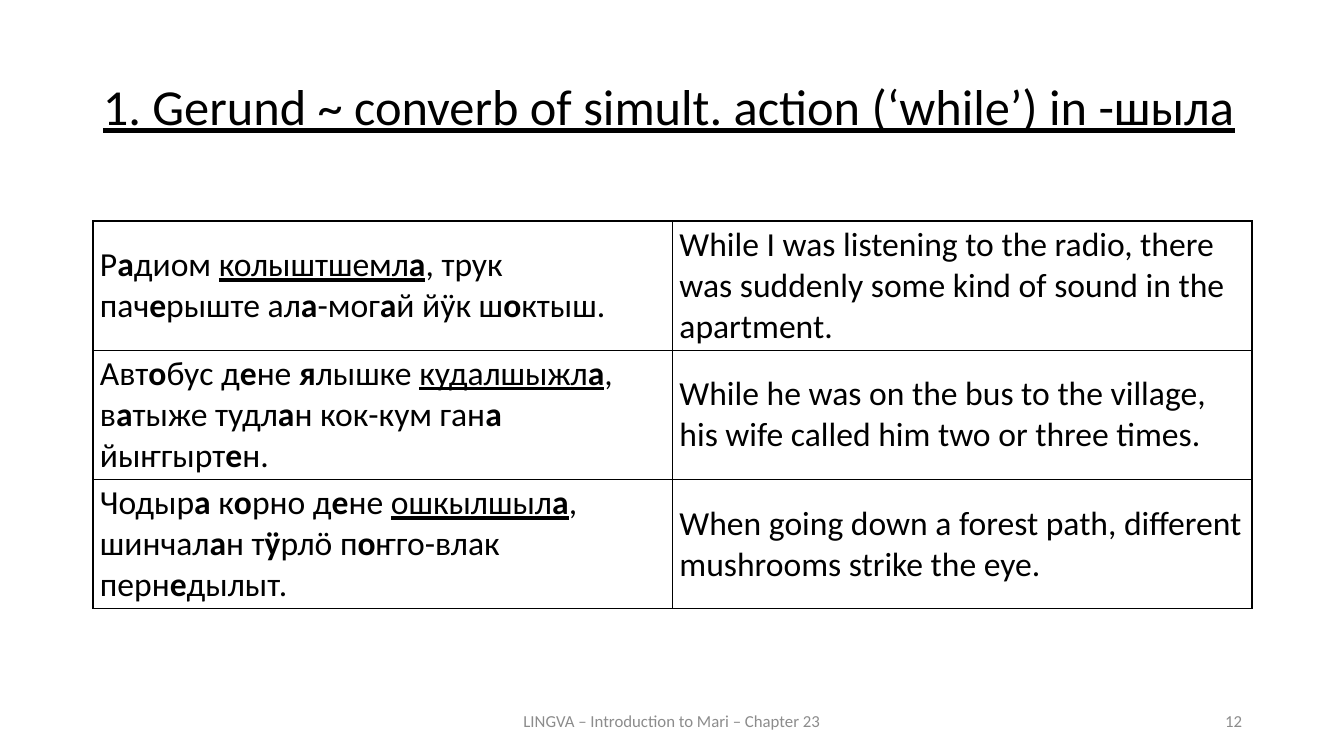
from lxml import etree
from pptx import Presentation
from pptx import util as u
from pptx.dml.color import RGBColor
from pptx.enum import text
from pptx.oxml import parse_xml
from pptx.oxml.ns import nsdecls

PX = 914400 / 100.8
BLACK = RGBColor(0x00, 0x00, 0x00)
GREY = RGBColor(0x8C, 0x8C, 0x8C)
MIDDLE = text.MSO_ANCHOR.MIDDLE
ALIGN = text.PP_ALIGN


def px(n):
    return u.Emu(round(n * PX))


def add_runs(p, marked, size, color):
    """Write text in which _..._ is underlined and *...* is bold."""
    for i, part in enumerate(marked.split("_")):
        for j, piece in enumerate(part.split("*")):
            if not piece:
                continue
            r = p.add_run()
            r.text = piece
            r.font.color.rgb = color
            fmt = {"name": "Calibri", "size": u.Pt(size),
                   "bold": j % 2 == 1, "underline": i % 2 == 1}
            for key, value in fmt.items():
                setattr(r.font, key, value)


prs = Presentation()
prs.slide_width, prs.slide_height = px(1344), px(756)
s = prs.slides.add_slide(prs.slide_layouts[6])

# Title, footer and slide number
lines = [
    ((93, 77, 1159, 84), "_1. Gerund ~ converb of simult. action (‘while’) in -шыла_",
     36, BLACK, text.MSO_ANCHOR.TOP,
     {"alignment": ALIGN.JUSTIFY, "line_spacing": 0.9, "space_before": u.Pt(12)}),
    ((445, 701, 454, 40), "LINGVA – Introduction to Mari – Chapter 23",
     12, GREY, MIDDLE, {"alignment": ALIGN.CENTER}),
    ((950, 701, 302, 40), "12", 12, GREY, MIDDLE, {"alignment": ALIGN.RIGHT}),
]
for box, words, size, color, anchor, fmt in lines:
    tf = s.shapes.add_textbox(*map(px, box)).text_frame
    tf.word_wrap = True
    tf.vertical_anchor = anchor
    p = tf.paragraphs[0]
    for key, value in fmt.items():
        setattr(p, key, value)
    add_runs(p, words, size, color)

# Example sentences with translations
examples = [
    ("Р*а*диом _колыштшемл*а*_, трук пач*е*рыште ал*а*-мог*а*й йӱк ш*о*ктыш.",
     "While I was listening to the radio, there was suddenly some kind of "
     "sound in the apartment."),
    ("Авт*о*бус д*е*не *я*лышке _кудалшыжл*а*_, в*а*тыже тудл*а*н кок-кум "
     "ган*а* йыҥгырт*е*н.",
     "While he was on the bus to the village, his wife called him two or "
     "three times."),
    ("Чодыр*а* к*о*рно д*е*не _ошкылшыл*а*_, шинчал*а*н т*ӱ*рлӧ п*о*ҥго-влак "
     "перн*е*дылыт.",
     "When going down a forest path, different mushrooms strike the eye."),
]
table = s.shapes.add_table(3, 2, px(93), px(221), px(1159), px(388)).table
table.first_row = table.horz_banding = False
cell_format = {"vertical_anchor": MIDDLE, "margin_left": px(7),
               "margin_right": px(7), "margin_top": 0, "margin_bottom": 0}
for row, sentences in enumerate(examples):
    for col, sentence in enumerate(sentences):
        cell = table.cell(row, col)
        for key, value in cell_format.items():
            setattr(cell, key, value)
        add_runs(cell.text_frame.paragraphs[0], sentence, 24, BLACK)
        # Cell borders come before the fill in the cell properties
        tcPr = cell._tc.get_or_add_tcPr()
        for side in "LRTB":
            tcPr.append(parse_xml(
                f'<a:ln{side} {nsdecls("a")} w="{u.Pt(1)}"><a:solidFill>'
                f'<a:srgbClr val="{BLACK}"/></a:solidFill></a:ln{side}>'))
        cell.fill.background()

prs.save("out.pptx")
